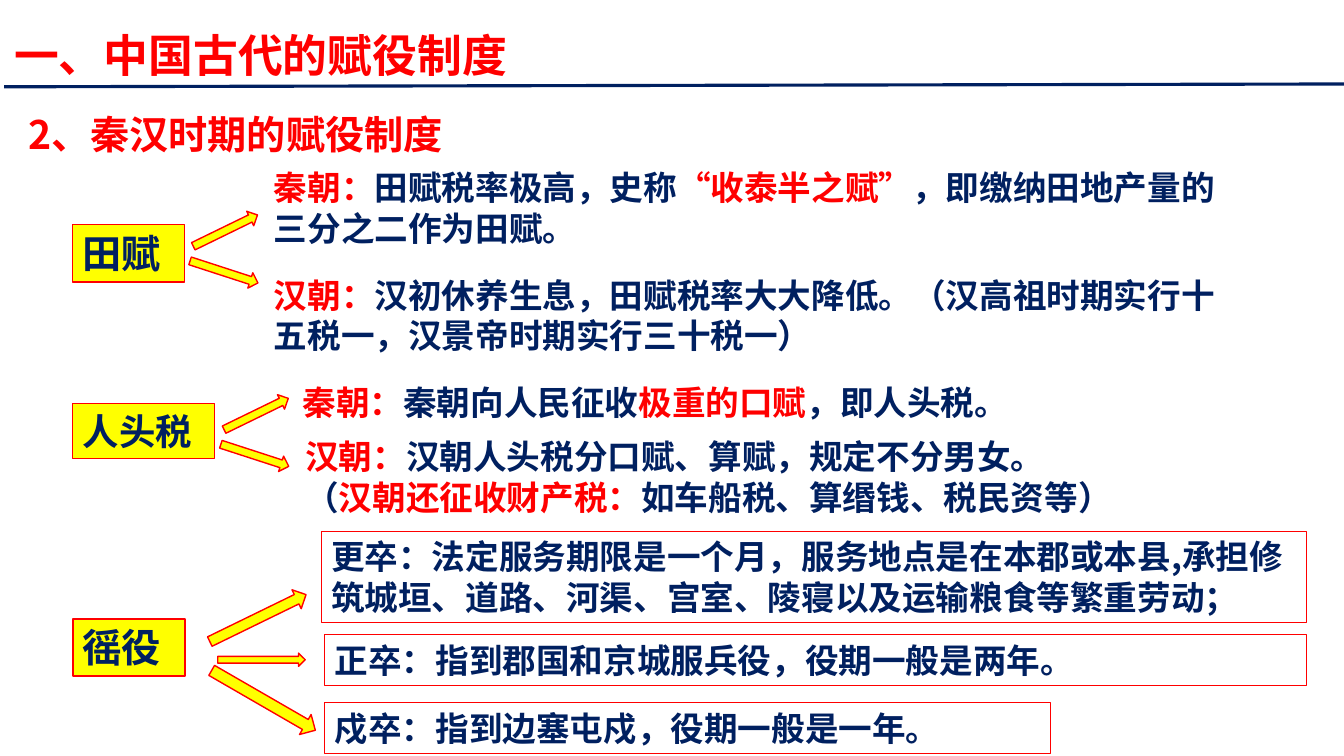
from dataclasses import dataclass

from lxml.etree import SubElement
from pptx import Presentation
from pptx.dml.color import RGBColor
from pptx.enum.lang import MSO_LANGUAGE_ID
from pptx.enum.shapes import MSO_CONNECTOR, MSO_SHAPE
from pptx.enum.text import MSO_ANCHOR, MSO_AUTO_SIZE, PP_ALIGN
from pptx.oxml.ns import qn
from pptx.util import Pt


@dataclass(frozen=True)
class Theme:
    red: RGBColor = RGBColor(255, 0, 0)
    navy: RGBColor = RGBColor(0, 32, 96)
    yellow: RGBColor = RGBColor(255, 255, 0)
    body_font: str = "Noto Sans CJK SC"
    title_font: str = "Noto Sans CJK JP"
    title: int = 32
    heading: int = 28
    small_heading: int = 26
    body: int = 24


THEME = Theme()


def set_values(target, values):
    for name, value in values.items():
        setattr(target, name, value)


def write_text(shape, paragraphs, size, font_name=THEME.body_font, wrap=True):
    frame = shape.text_frame
    set_values(frame, {
        "word_wrap": wrap,
        "auto_size": MSO_AUTO_SIZE.SHAPE_TO_FIT_TEXT,
        "vertical_anchor": MSO_ANCHOR.TOP,
    })
    for index, runs in enumerate(paragraphs):
        paragraph = frame.add_paragraph() if index else frame.paragraphs[0]
        paragraph.alignment = PP_ALIGN.LEFT
        for text, color in runs:
            run = paragraph.add_run()
            run.text = text
            set_values(run.font, {
                "name": font_name,
                "size": Pt(size),
                "bold": True,
                "language_id": MSO_LANGUAGE_ID.SIMPLIFIED_CHINESE,
            })
            run.font.color.rgb = color
            SubElement(run.font._element, qn("a:ea"), typeface=font_name)


def add_text(slide, bounds, paragraphs, size=THEME.body, **options):
    shape = slide.shapes.add_textbox(*map(Pt, bounds))
    write_text(shape, paragraphs, size, **options)


def add_outlined(slide, kind, bounds, fill=None, line_width=1):
    shape = slide.shapes.add_shape(kind, *map(Pt, bounds))
    shape.shadow.inherit = False
    if fill is None:
        shape.fill.background()
    else:
        shape.fill.solid()
        shape.fill.fore_color.rgb = fill
    shape.line.color.rgb = THEME.red
    shape.line.width = Pt(line_width)
    return shape


def add_label(slide, bounds, text, size, line_width):
    shape = add_outlined(slide, MSO_SHAPE.RECTANGLE, bounds, THEME.yellow, line_width)
    write_text(shape, [[(text, THEME.navy)]], size)


def add_duty(slide, bounds, text):
    shape = add_outlined(slide, MSO_SHAPE.RECTANGLE, bounds, line_width=0.75)
    write_text(shape, [[(text, THEME.navy)]], THEME.body)


def add_arrow(slide, bounds, rotation=0):
    shape = add_outlined(slide, MSO_SHAPE.RIGHT_ARROW, bounds, THEME.yellow)
    shape.rotation = rotation


def add_arrow_pair(slide, left, top):
    add_arrow(slide, (left, top, 51, 11.5), -26)
    add_arrow(slide, (left - 1, top + 29.5, 51, 11.5), 18)


def add_rule(slide, start, end):
    connector = slide.shapes.add_connector(MSO_CONNECTOR.STRAIGHT, *map(Pt, start + end))
    connector.line.color.rgb = THEME.navy
    connector.line.width = Pt(2.25)
    SubElement(connector._element.spPr, qn("a:effectLst"))


def main():
    presentation = Presentation()
    presentation.slide_width = Pt(960)
    presentation.slide_height = Pt(540)
    slide = presentation.slides.add_slide(presentation.slide_layouts[6])
    red, navy = THEME.red, THEME.navy

    add_rule(slide, (3, 62), (960, 60))
    add_text(slide, (3, 16, 371.5, 46), [[("一、中国古代的赋役制度", red)]],
             THEME.title, font_name=THEME.title_font, wrap=False)
    add_text(slide, (13, 75, 320, 41), [[("2、秦汉时期的赋役制度", red)]],
             THEME.heading, font_name=THEME.title_font, wrap=False)

    add_label(slide, (52, 160.5, 80, 41), "田赋", THEME.heading, 1)
    add_label(slide, (52, 288.5, 101, 39), "人头税", THEME.small_heading, 0.75)
    add_label(slide, (52, 442, 80, 41), "徭役", THEME.heading, 1.25)

    add_arrow_pair(slide, 135.5, 159)
    add_arrow_pair(slide, 157.5, 290)
    add_arrow(slide, (146, 434, 76.5, 15), -26)
    add_arrow(slide, (155.5, 466.5, 62.5, 9.5))
    add_arrow(slide, (145.5, 492, 85.5, 16.5), 30)

    add_text(slide, (188.5, 116, 708, 65.5), [[
        ("秦朝：", red), ("田赋税率极高，史称", navy), ("“收泰半之赋”", red),
        ("，即缴纳田地产量的三分之二作为田赋。", navy)]])
    add_text(slide, (188.5, 192.5, 690.5, 65.5), [[
        ("汉朝：", red),
        ("汉初休养生息，田赋税率大大降低。（汉高祖时期实行十五税一，汉景帝时期实行三十税一）", navy)]])
    add_text(slide, (209, 269, 546, 36), [[
        ("秦朝：", red), ("秦朝向人民征收", navy), ("极重的口赋", red), ("，即人头税。", navy)]])
    add_text(slide, (211, 308, 710, 65.5), [
        [("汉朝：", red), ("汉朝人头税分口赋、算赋，规定不分男女。", navy)],
        [("（", navy), ("汉朝还征收财产税：", red), ("如车船税、算缗钱、税民资等）", navy)]])

    add_duty(slide, (229.5, 379.5, 703.5, 65.5),
             "更卒：法定服务期限是一个月，服务地点是在本郡或本县,承担修筑城垣、道路、河渠、宫室、陵寝以及运输粮食等繁重劳动；")
    add_duty(slide, (232, 453.5, 701, 36), "正卒：指到郡国和京城服兵役，役期一般是两年。")
    add_duty(slide, (232, 502, 518.5, 36), "戍卒：指到边塞屯戍，役期一般是一年。")

    presentation.save("out.pptx")


if __name__ == "__main__":
    main()
